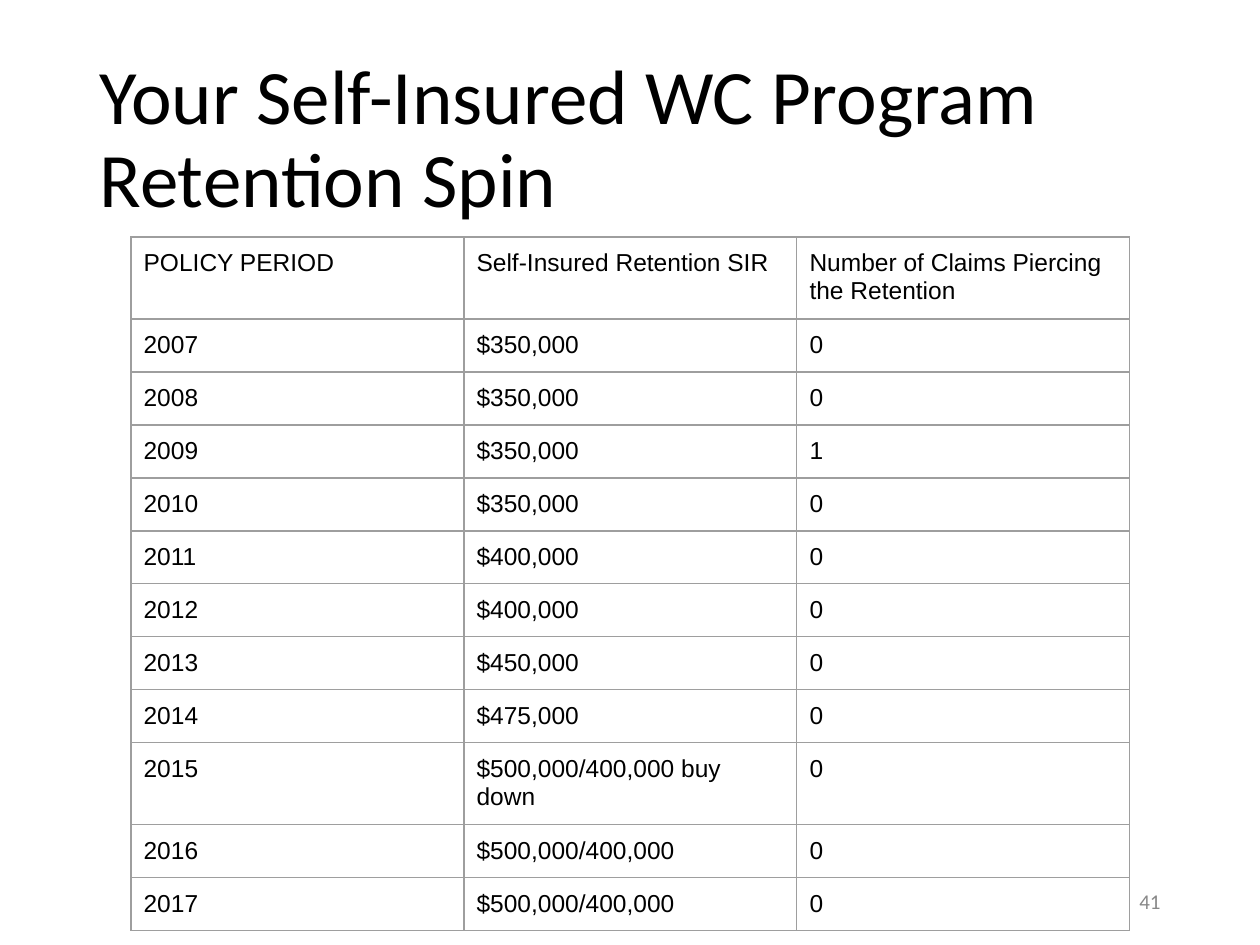
from dataclasses import dataclass

from lxml import etree
from pptx import Presentation
from pptx import util as u
from pptx.dml.color import RGBColor
from pptx.enum import text
from pptx.oxml import ns

PX = u.Inches(1) / 126


def px(length):
    return u.Emu(round(length * PX))


@dataclass(frozen=True)
class Theme:
    heading_font: str = "Calibri"
    table_font: str = "Arial"
    ink: str = "000000"
    muted: str = "888888"
    border: str = "9E9E9E"
    title_size: int = 44
    table_size: int = 14
    number_size: int = 12
    border_width: float = 0.75
    inset: float = 0.1


class SlideBuilder:
    def __init__(self, slide, theme):
        self.slide = slide
        self.theme = theme

    def set_text(self, frame, content, font, size, color, align=text.PP_ALIGN.LEFT):
        frame.text = content
        paragraph = frame.paragraphs[0]
        paragraph.alignment = align
        paragraph.font.name = font
        paragraph.font.size = u.Pt(size)
        paragraph.font.color.rgb = RGBColor.from_string(color)
        return paragraph

    def title(self, content, left, top, width, height):
        theme = self.theme
        shape = self.slide.shapes.title
        shape.left, shape.top, shape.width, shape.height = map(px, (left, top, width, height))
        frame = shape.text_frame
        frame.word_wrap = True
        frame.auto_size = text.MSO_AUTO_SIZE.NONE
        frame.vertical_anchor = text.MSO_ANCHOR.MIDDLE
        frame.margin_left = frame.margin_right = u.Inches(theme.inset)
        frame.margin_top = frame.margin_bottom = u.Inches(theme.inset)
        paragraph = self.set_text(frame, content, theme.heading_font, theme.title_size, theme.ink)
        paragraph.line_spacing = 0.9
        paragraph.space_before = u.Pt(0)

    def page_number(self, content, left, top, width, height):
        theme = self.theme
        frame = self.slide.shapes.add_textbox(*map(px, (left, top, width, height))).text_frame
        frame.word_wrap = True
        frame.vertical_anchor = text.MSO_ANCHOR.MIDDLE
        self.set_text(frame, content, theme.heading_font, theme.number_size, theme.muted,
                      text.PP_ALIGN.RIGHT)

    def table(self, rows, left, top, column_width, row_heights):
        columns = len(rows[0])
        table = self.slide.shapes.add_table(
            len(rows), columns, px(left), px(top),
            px(column_width * columns), px(sum(row_heights))).table
        table.first_row = table.horz_banding = False
        for column in table.columns:
            column.width = px(column_width)
        for row, height, values in zip(table.rows, row_heights, rows):
            row.height = px(height)
            for cell, value in zip(row.cells, values):
                self.cell(cell, value)

    def cell(self, cell, value):
        theme = self.theme
        self.set_text(cell.text_frame, value, theme.table_font, theme.table_size, theme.ink)
        cell.margin_left = cell.margin_right = u.Inches(theme.inset)
        cell.margin_top = cell.margin_bottom = u.Inches(theme.inset)
        self.borders(cell)
        cell.fill.background()

    def borders(self, cell):
        properties = cell._tc.get_or_add_tcPr()
        for side in ("lnL", "lnR", "lnT", "lnB"):
            line = etree.SubElement(properties, ns.qn(f"a:{side}"),
                                    w=str(u.Pt(self.theme.border_width)))
            fill = etree.SubElement(line, ns.qn("a:solidFill"))
            etree.SubElement(fill, ns.qn("a:srgbClr"), val=self.theme.border)


def main():
    presentation = Presentation()
    presentation.slide_width, presentation.slide_height = u.Inches(10), u.Inches(7.5)
    title_only = presentation.slide_layouts[5]
    builder = SlideBuilder(presentation.slides.add_slide(title_only), Theme())

    # Title
    builder.title("Your Self-Insured WC Program Retention Spin", 87, 50, 1086, 183)

    # Retention history, one row per policy year from 2007
    header = ("POLICY PERIOD", "Self-Insured Retention SIR",
              "Number of Claims Piercing the Retention")
    retentions = (["$350,000"] * 4 + ["$400,000"] * 2
                  + ["$450,000", "$475,000", "$500,000/400,000 buy down"]
                  + ["$500,000/400,000"] * 2)
    claims = {2009: "1"}
    rows = [header] + [(str(year), retention, claims.get(year, "0"))
                       for year, retention in enumerate(retentions, 2007)]
    two_line_rows = (header[0], "2015")
    heights = [82 if row[0] in two_line_rows else 53 for row in rows]
    builder.table(rows, 131, 237, 333, heights)

    # Slide number
    builder.page_number("41", 890, 876, 283, 50)

    presentation.save("out.pptx")


if __name__ == "__main__":
    main()
